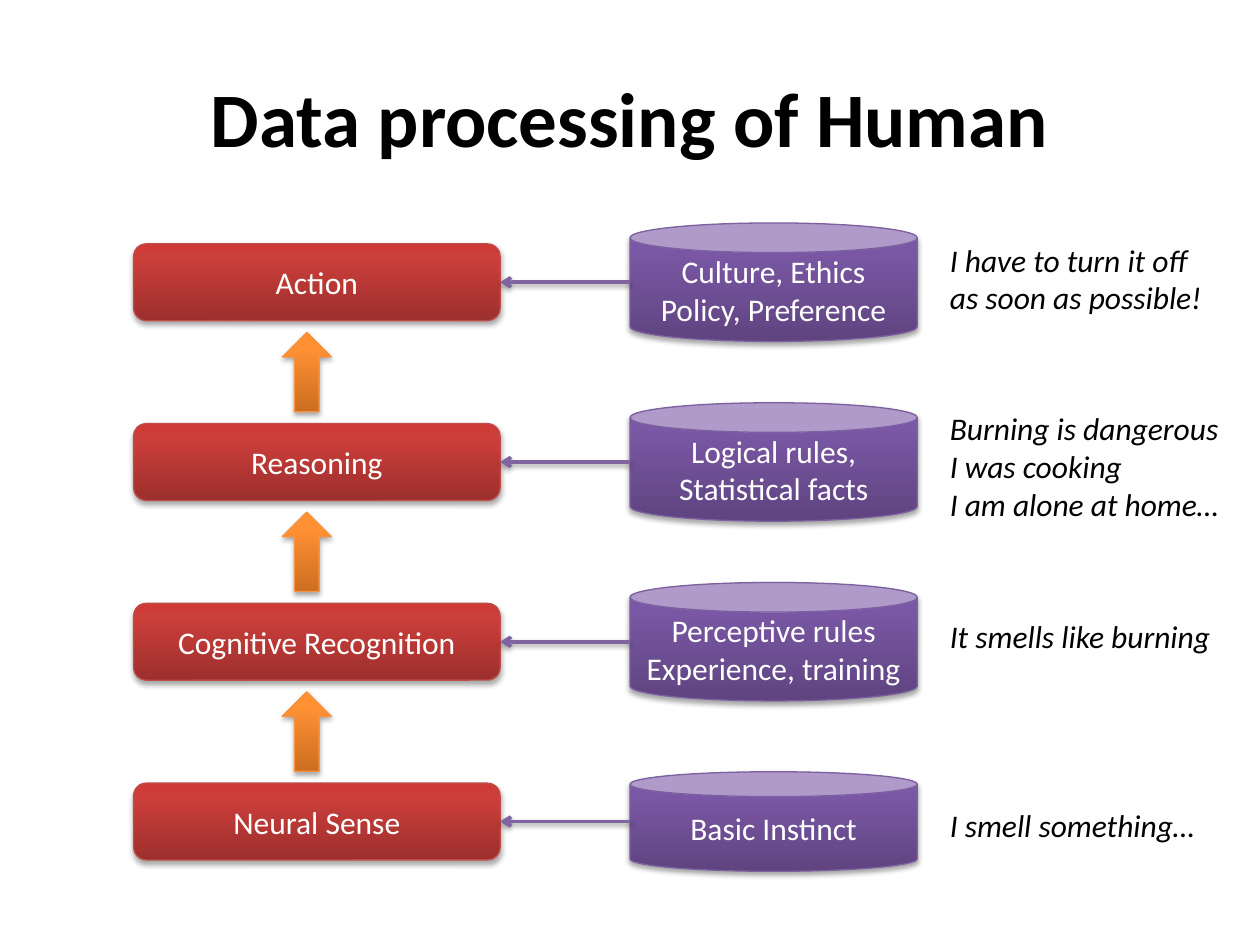
from pptx import Presentation, oxml, util as u
from pptx.dml.color import RGBColor
from pptx.enum import shapes, text
from pptx.oxml import ns

FONT = "Calibri"
BLACK = RGBColor(0x00, 0x00, 0x00)
WHITE = RGBColor(0xFF, 0xFF, 0xFF)
RED_LINE = RGBColor(0xBF, 0x4C, 0x48)
RED_FILL = (RGBColor(0x9C, 0x2F, 0x2D), RGBColor(0xCB, 0x3E, 0x3A), RGBColor(0xCE, 0x3B, 0x37))
PURPLE_LINE = RGBColor(0x7D, 0x60, 0xA0)
PURPLE_FILL = (RGBColor(0x5F, 0x44, 0x80), RGBColor(0x7B, 0x58, 0xA6), RGBColor(0x7C, 0x57, 0xA8))
ORANGE_LINE = RGBColor(0xF6, 0x92, 0x40)
ORANGE_FILL = (RGBColor(0xCC, 0x6E, 0x20), RGBColor(0xFF, 0x90, 0x34), RGBColor(0xFF, 0x91, 0x36))
LINK = RGBColor(0x80, 0x64, 0xA2)

FIRST_CENTRE, LAST_CENTRE = 2.24, 6.52
STAGE_LEFT, STAGE_WIDTH, STAGE_HEIGHT = 1.06, 2.91, 0.61
STORE_LEFT, STORE_WIDTH = 5, 2.28
ARROW_WIDTH, ARROW_HEIGHT = 0.39, 0.63
NOTE_LEFT = 7.44

STAGES = [
    {"name": "Action", "rules": ["Culture, Ethics", "Policy, Preference"], "store_height": 0.94,
     "note": ["I have to turn it off", "as soon as possible!"], "note_box": (1.86, 2.22, 0.71)},
    {"name": "Reasoning", "rules": ["Logical rules, Statistical facts"], "store_height": 0.94,
     "note": ["Burning is dangerous", "I was cooking", "I am alone at home…"],
     "note_box": (3.2, 2.36, 1.01)},
    {"name": "Cognitive Recognition", "rules": ["Perceptive rules", "Experience, training"],
     "store_height": 0.94, "note": ["It smells like burning"], "note_box": (4.85, 2.29, 0.4)},
    {"name": "Neural Sense", "rules": ["Basic Instinct"], "store_height": 0.79,
     "note": ["I smell something…"], "note_box": (6.35, 2.17, 0.4)},
]


def write(frame, lines, size=18, color=BLACK, bold=False, italic=False, align=text.PP_ALIGN.LEFT):
    """Write one paragraph per line in a text frame."""
    for index, line in enumerate(lines):
        para = frame.add_paragraph() if index else frame.paragraphs[0]
        para.alignment = align
        span = para.add_run()
        span.text = line
        span.font.name = FONT
        span.font.size = u.Pt(size)
        span.font.bold = bold
        span.font.italic = italic
        span.font.color.rgb = color


def add_shadow(properties, distance, opacity):
    """Add a soft shadow that falls straight down."""
    properties.append(oxml.parse_xml(
        f'<a:effectLst {ns.nsdecls("a")}><a:outerShdw blurRad="{u.Pt(3.1)}" dist="{u.Pt(distance)}" '
        f'dir="5400000" rotWithShape="0"><a:srgbClr val="000000"><a:alpha val="{opacity * 1000}"/>'
        '</a:srgbClr></a:outerShdw></a:effectLst>'))


def add_glossy(page, kind, box, colors, line):
    """Add a preset shape with an upward gradient, a thin line and a shadow."""
    shape = page.shapes.add_shape(kind, *map(u.Inches, box))
    stops = "".join(f'<a:gs pos="{place * 1000}"><a:srgbClr val="{color}"/></a:gs>'
                    for place, color in zip((0, 80, 100), colors))
    properties = shape._element.spPr
    properties.insert(2, oxml.parse_xml(
        f'<a:gradFill {ns.nsdecls("a")} rotWithShape="1"><a:gsLst>{stops}</a:gsLst>'
        '<a:lin ang="16200000" scaled="0"/></a:gradFill>'))
    shape.line.color.rgb = line
    shape.line.width = u.Pt(0.75)
    add_shadow(properties, distance=1.8, opacity=35)
    return shape


def add_title(page, title, box):
    """Place and format the title placeholder."""
    holder = page.shapes.title
    holder.left, holder.top, holder.width, holder.height = map(u.Inches, box)
    holder.text_frame.vertical_anchor = text.MSO_ANCHOR.MIDDLE
    write(holder.text_frame, [title], size=44, bold=True, align=text.PP_ALIGN.CENTER)


def add_link(page, start, end, height):
    """Draw a level arrow from a knowledge store to its stage."""
    link = page.shapes.add_connector(
        shapes.MSO_CONNECTOR.STRAIGHT, *map(u.Inches, (start, height, end, height)))
    link.line.color.rgb = LINK
    link.line.width = u.Pt(2)
    link.line._get_or_add_ln().append(
        oxml.parse_xml(f'<a:tailEnd {ns.nsdecls("a")} type="arrow"/>'))
    add_shadow(link._element.spPr, distance=1.6, opacity=38)


def add_note(page, lines, box):
    """Add an italic thought beside a knowledge store."""
    frame = page.shapes.add_textbox(*map(u.Inches, box)).text_frame
    frame.word_wrap = False
    frame.auto_size = text.MSO_AUTO_SIZE.SHAPE_TO_FIT_TEXT
    write(frame, lines, italic=True)


def add_stage(page, stage, centre):
    """Add a stage, its knowledge store, the link between them and the note."""
    top = centre - STAGE_HEIGHT / 2
    block = add_glossy(page, shapes.MSO_SHAPE.ROUNDED_RECTANGLE,
                       (STAGE_LEFT, top, STAGE_WIDTH, STAGE_HEIGHT), RED_FILL, RED_LINE)
    height = stage["store_height"]
    store = add_glossy(page, shapes.MSO_SHAPE.CAN,
                       (STORE_LEFT, centre - height / 2, STORE_WIDTH, height),
                       PURPLE_FILL, PURPLE_LINE)
    for shape, lines in ((block, [stage["name"]]), (store, stage["rules"])):
        write(shape.text_frame, lines, color=WHITE, align=text.PP_ALIGN.CENTER)
    add_link(page, STORE_LEFT, STAGE_LEFT + STAGE_WIDTH, centre)
    add_note(page, stage["note"], (NOTE_LEFT, *stage["note_box"]))


def add_stages(page, stages, first, last):
    """Stack the stages evenly, with an upward arrow in each gap."""
    step = (last - first) / (len(stages) - 1)
    for index, stage in enumerate(stages):
        centre = first + index * step
        add_stage(page, stage, centre)
        if index:
            middle = centre - step / 2
            add_glossy(page, shapes.MSO_SHAPE.UP_ARROW,
                       (2.24, middle - ARROW_HEIGHT / 2, ARROW_WIDTH, ARROW_HEIGHT),
                       ORANGE_FILL, ORANGE_LINE)


def main():
    """Build and save the deck."""
    deck = Presentation()
    deck.slide_width, deck.slide_height = u.Inches(10), u.Inches(7.5)
    page = deck.slides.add_slide(deck.slide_layouts[5])
    add_title(page, "Data processing of Human", (0.5, 0.3, 9, 1.25))
    add_stages(page, STAGES, FIRST_CENTRE, LAST_CENTRE)
    deck.save("out.pptx")


if __name__ == "__main__":
    main()
